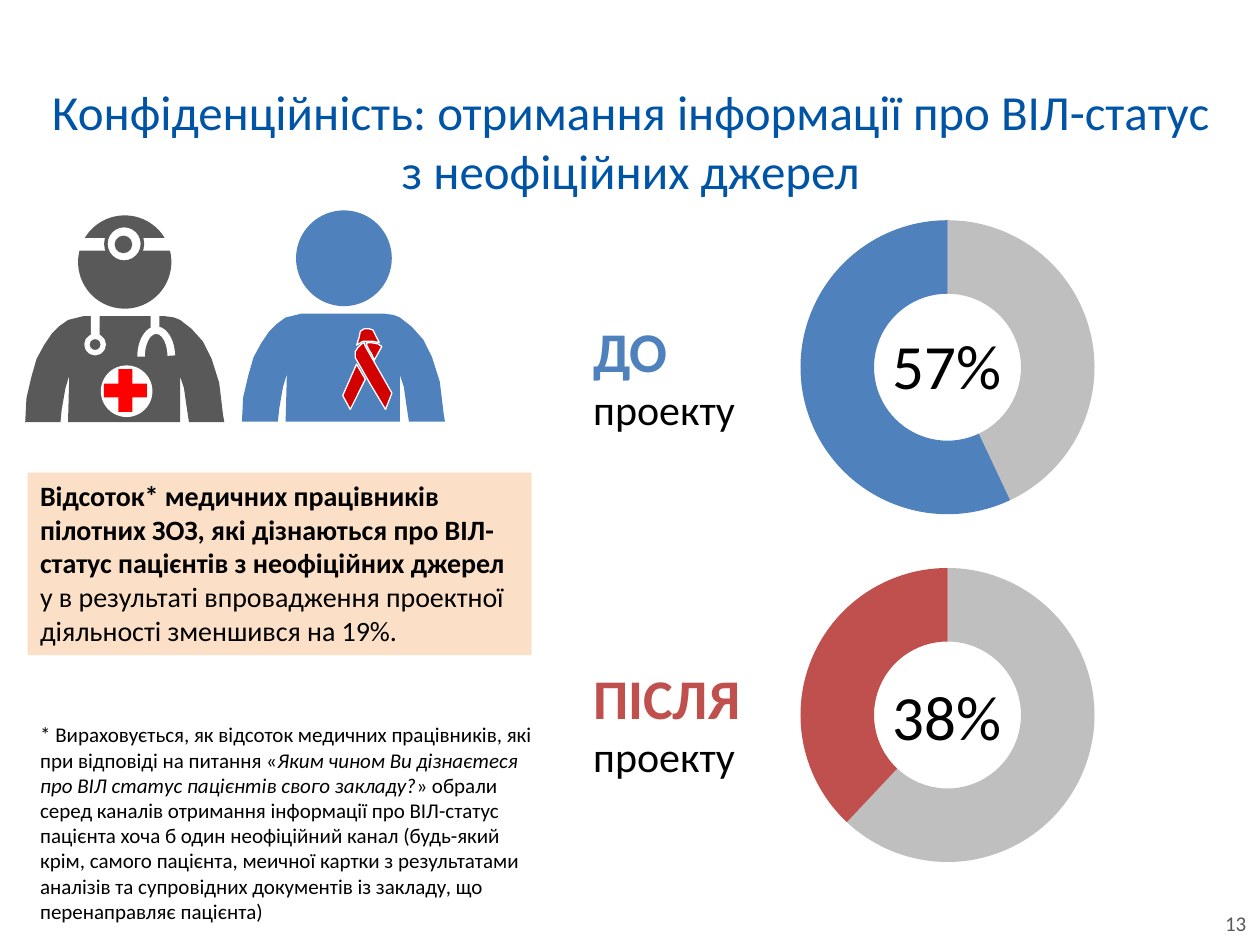
from lxml.etree import SubElement
from pptx import Presentation
from pptx.chart.data import CategoryChartData
from pptx.dml.color import RGBColor
from pptx.enum.chart import XL_CHART_TYPE
from pptx.enum.shapes import MSO_SHAPE
from pptx.enum.text import MSO_ANCHOR, MSO_AUTO_SIZE, PP_ALIGN
from pptx.oxml.ns import qn
from pptx.util import Pt

PX = 9144  # EMU per px, 100 px to the inch
FONT = "Calibri"
WHITE = RGBColor(0xFF, 0xFF, 0xFF)
BLACK = RGBColor(0, 0, 0)
TITLE_BLUE = RGBColor(0x00, 0x54, 0xA6)
BLUE = RGBColor(0x4F, 0x81, 0xBD)
BRICK = RGBColor(0xC0, 0x50, 0x4D)
SILVER = RGBColor(0xBF, 0xBF, 0xBF)
GRAY = RGBColor(0x59, 0x59, 0x59)
PEACH = RGBColor(0xFC, 0xD5, 0xB5)
RED = RGBColor(0xFF, 0, 0)
RIBBON = RGBColor(0xD3, 0, 0)

prs = Presentation()
prs.slide_width, prs.slide_height = 1000 * PX, 750 * PX
slide = prs.slides.add_slide(prs.slide_layouts[5])
shapes = slide.shapes


def paint(s, fill, line=None, width=0):
    s.shadow.inherit = False
    s.fill.solid()
    s.fill.fore_color.rgb = fill
    if line is None:
        s.line.fill.background()
    else:
        s.line.color.rgb = line
        s.line.width = Pt(width)
    return s


def write(p, text, size, color=BLACK, **fmt):
    r = p.add_run()
    r.text = text
    for name, value in dict(name=FONT, size=Pt(size), **fmt).items():
        setattr(r.font, name, value)
    r.font.color.rgb = color


# Title
title = shapes.title
title.left, title.top, title.width, title.height = [v * PX for v in (28, 60, 945, 94)]
tf = title.text_frame
tf.auto_size = MSO_AUTO_SIZE.NONE
tf.vertical_anchor = MSO_ANCHOR.TOP
tf.paragraphs[0].alignment = PP_ALIGN.CENTER
write(tf.paragraphs[0],
      "Конфіденційність: отримання інформації про ВІЛ-статус з неофіційних джерел",
      28, TITLE_BLUE)

# Doughnut charts before and after the project
for top, share, color in ((161, 57, BLUE), (437, 38, BRICK)):
    data = CategoryChartData()
    data.categories = ["1", "2"]
    data.add_series("Series 1", (100 - share, share))
    chart = shapes.add_chart(XL_CHART_TYPE.DOUGHNUT, 619 * PX, top * PX,
                             266 * PX, 261 * PX, data).chart
    chart.has_legend = chart.has_title = False
    chart.font.name, chart.font.size = FONT, Pt(18)
    chart.font.color.rgb = BLACK
    plot = chart.plots[0]
    plot.vary_by_categories = True
    for hole in chart.element.iter(qn("c:holeSize")):
        hole.set("val", "55")
    for i, fill in enumerate((SILVER, color)):
        point = plot.series[0].points[i].format
        point.fill.solid()
        point.fill.fore_color.rgb = fill
        point.line.fill.background()

# Peach panel behind the finding
panel = paint(shapes.add_shape(MSO_SHAPE.RECTANGLE, 22 * PX, 375 * PX, 400 * PX, 145 * PX),
              PEACH)
for rgb in panel.element.iter(qn("a:srgbClr")):
    SubElement(rgb, qn("a:alpha"), val="75000")
tf = panel.text_frame
tf.word_wrap = True
tf.vertical_anchor = MSO_ANCHOR.TOP
p = tf.paragraphs[0]
p.alignment = PP_ALIGN.LEFT
write(p, "Відсоток* медичних працівників пілотних ЗОЗ, які дізнаються про ВІЛ-статус "
         "пацієнтів з неофіційних джерел", 16, bold=True)
write(p, " у в результаті впровадження проектної діяльності зменшився на 19%.", 16)

# Text boxes: box, wrap, anchor, alignment, runs
TOP, MIDDLE = MSO_ANCHOR.TOP, MSO_ANCHOR.MIDDLE
LEFT, CENTER, RIGHT = PP_ALIGN.LEFT, PP_ALIGN.CENTER, PP_ALIGN.RIGHT
texts = (
    ((698, 254, 107, 71), False, TOP, CENTER, [("57%", 36, BLACK, {})]),
    ((698, 533, 107, 71), False, TOP, CENTER, [("38%", 36, BLACK, {})]),
    ((461, 246, 140, 104), True, MIDDLE, LEFT,
     [("ДО", 32, BLUE, {"bold": True}), (" проекту", 24, BLACK, {})]),
    ((461, 521, 140, 104), True, MIDDLE, LEFT,
     [("ПІСЛЯ ", 32, BRICK, {"bold": True}), ("проекту", 24, BLACK, {})]),
    ((22, 568, 415, 161), True, TOP, LEFT,
     [("* Вираховується, як відсоток медичних працівників, які при відповіді на питання «",
       12, BLACK, {}),
      ("Яким чином Ви дізнаєтеся про ВІЛ статус пацієнтів свого закладу?",
       12, BLACK, {"italic": True}),
      ("» обрали серед каналів отримання інформації про ВІЛ-статус пацієнта хоча б один "
       "неофіційний канал (будь-який крім, самого пацієнта, меичної картки з результатами "
       "аналізів та супровідних документів із закладу, що перенаправляє пацієнта)",
       12, BLACK, {})]),
    ((904, 716, 95, 33), True, MIDDLE, RIGHT, [("13", 12, GRAY, {})]),
)
for box, wrap, anchor, align, runs in texts:
    tf = shapes.add_textbox(*[v * PX for v in box]).text_frame
    tf.word_wrap = wrap
    tf.vertical_anchor = anchor
    p = tf.paragraphs[0]
    p.alignment = align
    for text, size, color, fmt in runs:
        write(p, text, size, color, **fmt)

# Doctor and patient: the same body at two sizes, with a round head
BODY = [(46, 0), (111, 0), (118, 1), (123, 3), (132, 10), (141, 20), (148, 34), (154, 53),
        (157, 78), (158, 84), (130, 84), (128, 71), (126, 57), (123, 48), (123, 84),
        (34, 84), (35, 47), (32, 57), (29, 74), (28, 84), (0, 84), (1, 65), (5, 48),
        (9, 34), (15, 23), (21, 14), (27, 8), (34, 3)]
for x, y, scale, head, color in ((20, 251, 1, (62, 171, 74, 74), GRAY),
                                 (192, 249, 1.02, (235, 167, 76, 76), BLUE)):
    body = shapes.build_freeform(*BODY[0], scale=PX * scale)
    body.add_line_segments(BODY[1:], close=True)
    paint(body.convert_to_shape(x * PX, y * PX), color)
    paint(shapes.add_shape(MSO_SHAPE.OVAL, *[v * PX for v in head]), color)

# Doctor's cross, head mirror and stethoscope
RECT, OVAL = MSO_SHAPE.RECTANGLE, MSO_SHAPE.OVAL
for kind, box, turn, fill, line, width in (
        (OVAL, (80, 290, 41, 41), 0, WHITE, None, 0),
        (RECT, (94, 293, 11, 34), 0, RED, None, 0),
        (RECT, (94, 293, 11, 34), 90, RED, None, 0),
        (RECT, (62, 189, 74, 10), 0, WHITE, None, 0),
        (OVAL, (84, 179, 29, 29), 0, WHITE, GRAY, 2),
        (OVAL, (91, 187, 14, 14), 0, GRAY, None, 0),
        (RECT, (64, 259, 23, 7), 90, WHITE, None, 0),
        (OVAL, (69, 267, 13, 13), 0, GRAY, WHITE, 3),
        (RECT, (117, 253, 12, 7), 90, WHITE, None, 0)):
    s = paint(shapes.add_shape(kind, *[v * PX for v in box]), fill, line, width)
    s.rotation = turn
arc = paint(shapes.add_shape(MSO_SHAPE.BLOCK_ARC, 109 * PX, 259 * PX, 30 * PX, 48 * PX), WHITE)
for i, value in enumerate((108, 213.81, 0.2)):
    arc.adjustments[i] = value

# Patient's ribbon: front band, back band in two pieces, top loop
for first, *others in (
        [[(289, 272), (290, 275), (311, 312), (306, 325), (294, 305), (282, 284), (282, 279),
          (284, 276), (287, 273)]],
        [[(283, 289), (287, 296), (290, 301), (278, 325), (272, 314)],
         [(291, 272), (295, 272), (300, 273), (303, 275), (302, 277), (297, 286), (295, 281),
          (293, 278), (291, 274)]],
        [[(289, 261), (293, 261), (296, 262), (298, 266), (301, 272), (296, 271), (288, 271),
          (283, 274), (285, 268), (286, 263)]]):
    band = shapes.build_freeform(*first[0], scale=PX)
    band.add_line_segments(first[1:], close=True)
    for piece in others:
        band.move_to(*piece[0])
        band.add_line_segments(piece[1:], close=True)
    paint(band.convert_to_shape(), RIBBON, WHITE, 0.75)

prs.save("out.pptx")
